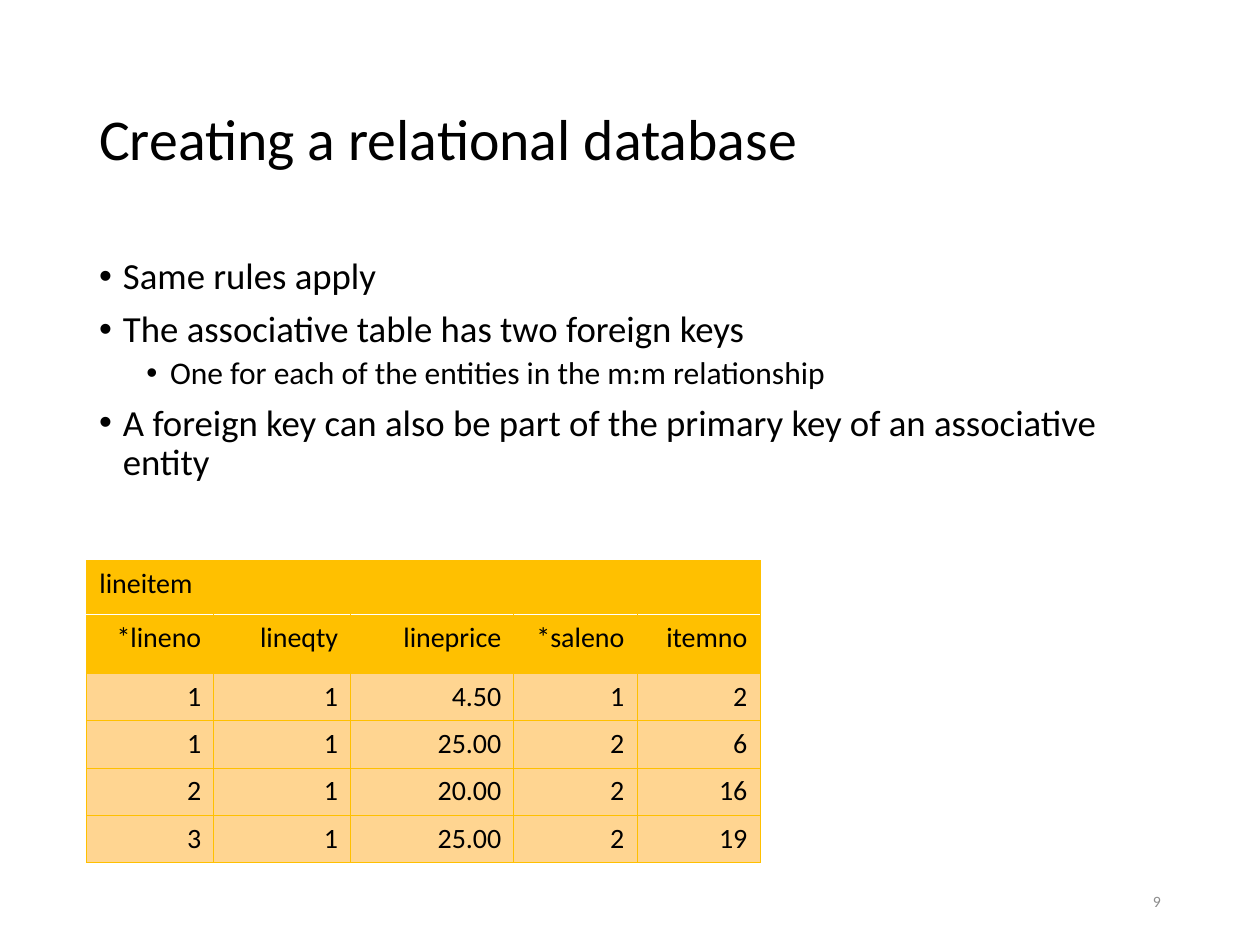
from lxml.etree import SubElement
from pptx import Presentation
from pptx.dml.color import RGBColor
from pptx.enum.text import MSO_ANCHOR, PP_ALIGN
from pptx.oxml.ns import qn
from pptx.util import Cm, Pt

FONT = "Calibri"
BLACK, GREY, WHITE = "000000", "8C8C8C", "FFFFFF"
GOLD, PALE_GOLD = "FFC000", "FFD591"

BULLETS = [
    (0, "Same rules apply"),
    (0, "The associative table has two foreign keys"),
    (1, "One for each of the entities in the m:m relationship"),
    (0, "A foreign key can also be part of the primary key of an associative entity"),
]
# font size, space before and left indent (cm) of each bullet level
LEVELS = [(21, 7.5, 0.48), (18, 3.8, 1.43)]
HANGING = 0.48

LINE_ITEMS = [
    ["lineitem", "", "", "", ""],
    ["*lineno", "lineqty", "lineprice", "*saleno", "itemno"],
    ["1", "1", "4.50", "1", "2"],
    ["1", "1", "25.00", "2", "6"],
    ["2", "1", "20.00", "2", "16"],
    ["3", "1", "25.00", "2", "19"],
]
COLUMN_WIDTHS = [2.56, 2.76, 3.29, 2.48, 2.48]
ROW_HEIGHTS = [1.09, 1.19] + [0.95] * 4


def colour(value):
    return RGBColor.from_string(value)


def set_format(target, values):
    for name, value in values.items():
        setattr(target, name, value)


def set_borders(cell, borders):
    """Draw borders given as {side: (colour, points)}; None hides a side."""
    properties = cell._tc.get_or_add_tcPr()
    for side in "LRTB":
        border = borders[side]
        line = SubElement(properties, qn(f"a:ln{side}"))
        if border is None:
            SubElement(line, qn("a:noFill"))
            continue
        line.set("w", str(Pt(border[1])))
        fill = SubElement(line, qn("a:solidFill"))
        SubElement(fill, qn("a:srgbClr")).set("val", border[0])


class SlideBuilder:
    def __init__(self, page):
        self.page = page

    def add_span(self, para, text, size, ink=BLACK, **paragraph_format):
        set_format(para, paragraph_format)
        span = para.add_run()
        span.text = text
        set_format(span.font, {"name": FONT, "size": Pt(size), "bold": False})
        span.font.color.rgb = colour(ink)

    def frame(self, left, top, width, height, anchor):
        box = self.page.shapes.add_textbox(Cm(left), Cm(top), Cm(width), Cm(height))
        set_format(box.text_frame, {"word_wrap": True, "vertical_anchor": anchor})
        return box.text_frame

    def text(self, area, text, size, **style):
        frame = self.frame(*area, MSO_ANCHOR.MIDDLE)
        self.add_span(frame.paragraphs[0], text, size, **style)

    def bullets(self, area, items):
        frame = self.frame(*area, MSO_ANCHOR.TOP)
        for index, (level, text) in enumerate(items):
            para = frame.add_paragraph() if index else frame.paragraphs[0]
            size, space, indent = LEVELS[level]
            self.add_span(para, text, size, level=level, line_spacing=0.9,
                          space_before=Pt(space))
            properties = para._p.get_or_add_pPr()
            properties.set("marL", str(Cm(indent)))
            properties.set("indent", str(-Cm(HANGING)))
            SubElement(properties, qn("a:buFont")).set("typeface", "Arial")
            SubElement(properties, qn("a:buChar")).set("char", "•")

    def table(self, left, top, rows, widths, heights):
        graphic = self.page.shapes.add_table(
            len(rows), len(widths), Cm(left), Cm(top),
            Cm(sum(widths)), Cm(sum(heights)))
        table = graphic.table
        set_format(table, {"first_row": False, "horz_banding": False})
        for column, width in zip(table.columns, widths):
            column.width = Cm(width)
        for row, height in zip(table.rows, heights):
            row.height = Cm(height)
        for row, texts in enumerate(rows):
            for column, text in enumerate(texts):
                self.cell(table.cell(row, column), text, row, column, len(widths))

    def cell(self, cell, text, row, column, column_count):
        borders = dict.fromkeys("LRTB", (GOLD, 0.5))
        if row == 0:
            borders["B"] = (WHITE, 1)
            if column > 0:
                borders["L"] = None
            if column < column_count - 1:
                borders["R"] = None
        elif row == 1:
            borders["T"] = (WHITE, 1)
        set_borders(cell, borders)
        cell.fill.solid()
        cell.fill.fore_color.rgb = colour(GOLD if row < 2 else PALE_GOLD)
        if text:
            alignment = PP_ALIGN.RIGHT if row else PP_ALIGN.JUSTIFY
            self.add_span(cell.text_frame.paragraphs[0], text, 16,
                          alignment=alignment, space_before=Pt(3),
                          space_after=Pt(3))


def main():
    deck = Presentation()
    set_format(deck, {"slide_width": Cm(25.4), "slide_height": Cm(19.05)})
    builder = SlideBuilder(deck.slides.add_slide(deck.slide_layouts[6]))
    builder.text((1.75, 1.02, 21.9, 3.68), "Creating a relational database", 33,
                 line_spacing=0.9)
    builder.bullets((1.75, 5.08, 21.9, 12.09), BULLETS)
    builder.text((17.93, 17.65, 5.72, 1.02), "9", 9, ink=GREY,
                 alignment=PP_ALIGN.RIGHT)
    builder.table(1.75, 11.3, LINE_ITEMS, COLUMN_WIDTHS, ROW_HEIGHTS)
    deck.save("out.pptx")


if __name__ == "__main__":
    main()
